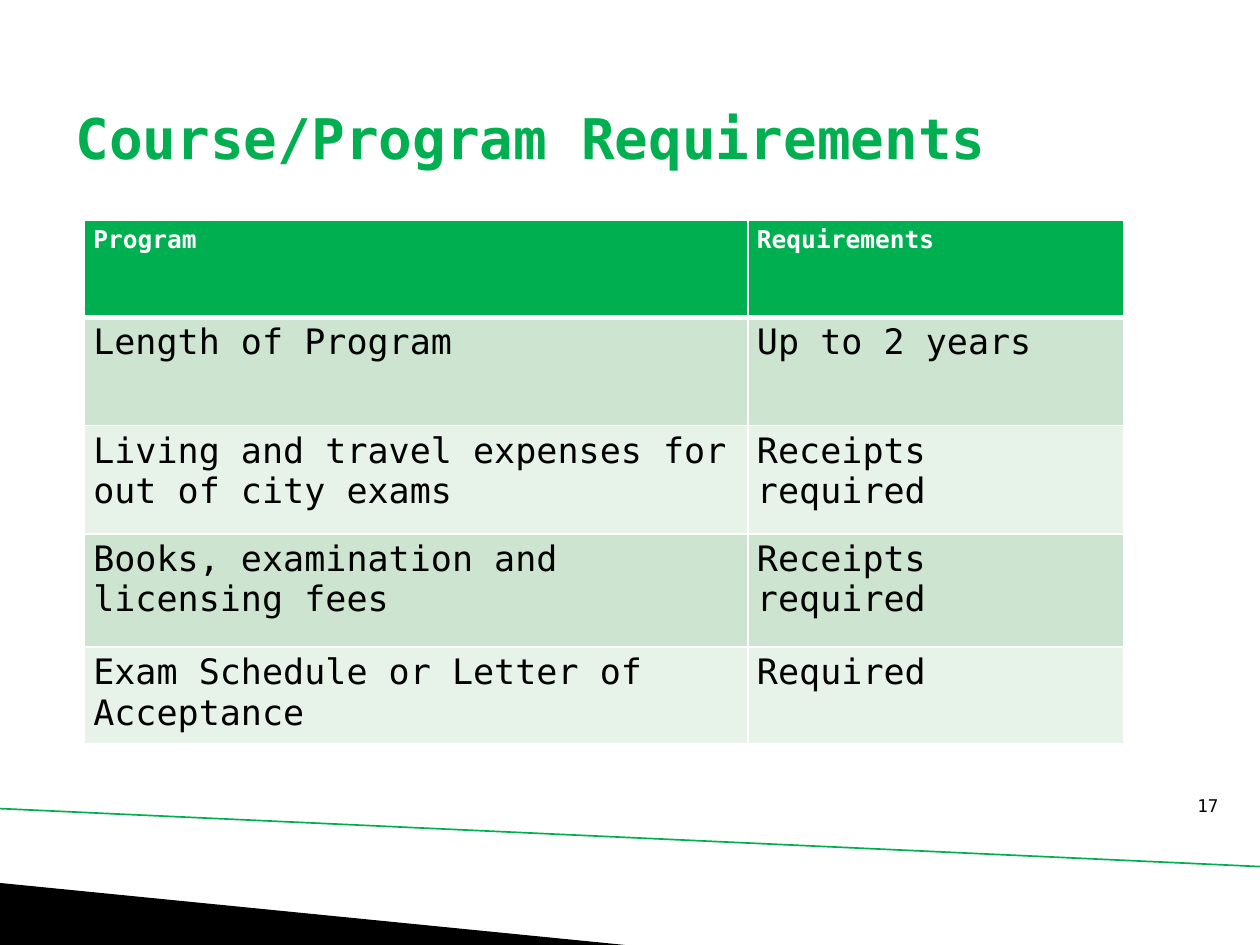
"""Build the course and program requirements slide."""
from lxml.etree import SubElement
from pptx import Presentation
from pptx.dml.color import RGBColor
from pptx.enum.text import MSO_ANCHOR as Anchor, PP_ALIGN as Align
from pptx.enum.shapes import MSO_CONNECTOR as Connector
from pptx.oxml.ns import qn
from pptx.util import Cm, Pt

GREEN, BLACK, WHITE = "00B050", "000000", "FFFFFF"
BANDS = ["CCE4D0", "E7F2E9"]


def color(hex_code):
    return RGBColor.from_string(hex_code)


def write(frame, text, size, hex_code, bold=False):
    run = frame.paragraphs[0].add_run()
    run.text = text
    run.font.name = "DejaVu Sans Mono"
    run.font.size = Pt(size)
    run.font.bold = bold
    run.font.color.rgb = color(hex_code)


prs = Presentation()
prs.slide_width, prs.slide_height = Cm(25.4), Cm(19.05)
slide = prs.slides.add_slide(prs.slide_layouts[6])
shapes = slide.shapes

slope = shapes.add_connector(Connector.STRAIGHT, Cm(0), Cm(16.3), Cm(25.42), Cm(17.47))
slope.line.color.rgb = color(GREEN)
slope.line.width = Pt(0.95)
SubElement(slope._element.spPr, qn("a:effectLst"))

outline = shapes.build_freeform(Cm(0), Cm(19.05))
outline.add_line_segments([(Cm(0), Cm(17.8)), (Cm(12.6), Cm(19.05))])
wedge = outline.convert_to_shape()
wedge.shadow.inherit = False
wedge.fill.solid()
wedge.fill.fore_color.rgb = color(BLACK)
wedge.line.fill.background()

page_number = shapes.add_textbox(Cm(23.3), Cm(15.9), Cm(2.1), Cm(0.76)).text_frame
page_number.word_wrap = True
page_number.paragraphs[0].alignment = Align.CENTER
write(page_number, "17", 10, BLACK)

rows = [
    ("Program", "Requirements"),
    ("Length of Program", "Up to 2 years"),
    ("Living and travel expenses for out of city exams", "Receipts required"),
    ("Books, examination and licensing fees", "Receipts required"),
    ("Exam Schedule or Letter of Acceptance", "Required"),
]
widths = [13.38, 7.57]
heights = [1.95, 2.18, 2.18, 2.28, 1.96]
requirements = shapes.add_table(
    len(rows), len(widths), Cm(1.7), Cm(4.45), Cm(sum(widths)), Cm(sum(heights))
).table
for column, width in zip(requirements.columns, widths):
    column.width = Cm(width)

for r, (texts, height) in enumerate(zip(rows, heights)):
    requirements.rows[r].height = Cm(height)
    header = r == 0
    for c, text in enumerate(texts):
        cell = requirements.cell(r, c)
        cell.margin_left = cell.margin_right = Cm(0.18)
        cell.margin_top = cell.margin_bottom = Cm(0.1)
        properties = cell._tc.get_or_add_tcPr()
        for side in ("lnL", "lnR", "lnT", "lnB"):
            thick = (header and side == "lnB") or (r == 1 and side == "lnT")
            border = SubElement(properties, qn(f"a:{side}"), w=str(Pt(3 if thick else 1)))
            paint = SubElement(border, qn("a:solidFill"))
            SubElement(paint, qn("a:srgbClr"), val=WHITE)
        cell.fill.solid()
        cell.fill.fore_color.rgb = color(GREEN if header else BANDS[(r - 1) % 2])
        if header:
            write(cell.text_frame, text, 14, WHITE, bold=True)
        else:
            write(cell.text_frame, text, 20, BLACK)

title = shapes.add_textbox(Cm(1.27), Cm(1.57), Cm(22.86), Cm(2.39)).text_frame
title.word_wrap = True
title.vertical_anchor = Anchor.MIDDLE
write(title, "Course/Program Requirements", 32, GREEN, bold=True)

prs.save("out.pptx")
